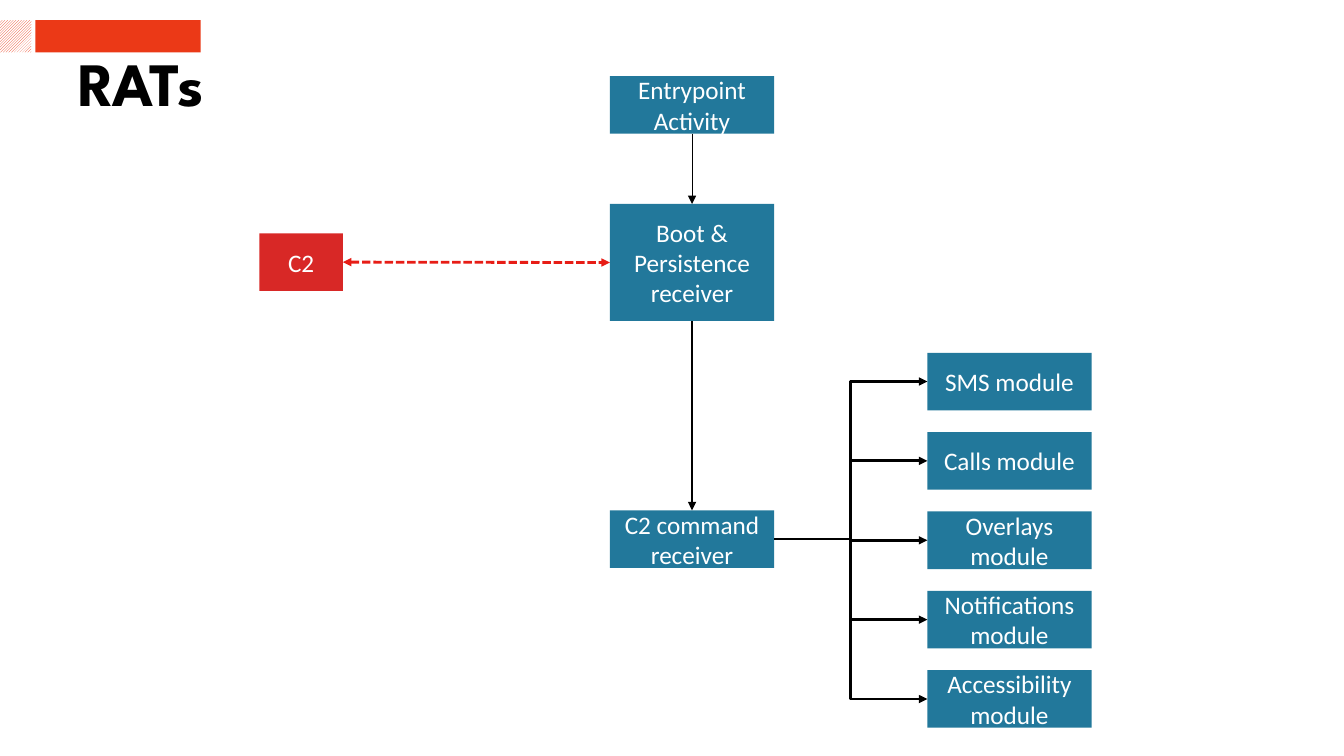
from lxml.etree import SubElement
from pptx import Presentation
from pptx.dml.color import RGBColor
from pptx.enum.dml import MSO_LINE, MSO_PATTERN
from pptx.enum.shapes import MSO_CONNECTOR, MSO_SHAPE
from pptx.enum.text import MSO_ANCHOR, MSO_AUTO_SIZE, PP_ALIGN
from pptx.oxml.ns import qn
from pptx.util import Cm, Pt

COLORS = {
    "accent": "EB3917",
    "server": "D82826",
    "traffic": "E71D16",
    "module": "22789B",
    "black": "000000",
    "white": "FFFFFF",
}
TITLE_FONT = {"name": "League Spartan", "size": Pt(44), "bold": True}
BOX_FONT = {"name": "Calibri", "size": Pt(18), "bold": False}
TITLE_FRAME = {
    "margin_left": Cm(0.03), "margin_right": Cm(0.03),
    "margin_top": Cm(0.03), "margin_bottom": Cm(0.03),
    "vertical_anchor": MSO_ANCHOR.TOP, "auto_size": MSO_AUTO_SIZE.NONE,
    "word_wrap": True,
}
BOX_FRAME = {"vertical_anchor": MSO_ANCHOR.MIDDLE, "word_wrap": True}
TOP, LEFT, BOTTOM, RIGHT = range(4)
BOX_W, BOX_H = 4.14, 1.45
FLOW_X, MODULE_X = 15.37, 23.37
MODULE_TOP, MODULE_STEP = 8.89, 2
MODULES = ["SMS module", "Calls module", "Overlays module",
           "Notifications module", "Accessibility module"]


def rgb(name):
    return RGBColor.from_string(COLORS[name])


def style(target, values):
    for key, value in values.items():
        setattr(target, key, value)


class Deck:
    def __init__(self):
        self.prs = Presentation()
        self.prs.slide_width, self.prs.slide_height = Cm(33.87), Cm(19.05)
        self.s = self.prs.slides.add_slide(self.prs.slide_layouts[5])

    def label(self, sp, text, frame, font, color, align):
        tf = sp.text_frame
        style(tf, frame)
        p = tf.paragraphs[0]
        p.alignment = align
        r = p.add_run()
        r.text = text
        style(r.font, font)
        r.font.color.rgb = rgb(color)
        return p

    def title(self, text, x, y, w, h):
        sp = self.s.shapes.title
        style(sp, {"left": Cm(x), "top": Cm(y), "width": Cm(w), "height": Cm(h)})
        p = self.label(sp, text, TITLE_FRAME, TITLE_FONT, "black", PP_ALIGN.LEFT)
        p.line_spacing = 0.8

    def bar(self, x, y, w, h, color, hatched=False):
        sp = self.s.shapes.add_shape(MSO_SHAPE.RECTANGLE, Cm(x), Cm(y), Cm(w), Cm(h))
        sp.shadow.inherit = False
        sp.line.fill.background()
        if hatched:
            sp.fill.patterned()
            sp.fill.pattern = MSO_PATTERN.LIGHT_UPWARD_DIAGONAL
            sp.fill.back_color.rgb = rgb("white")
        else:
            sp.fill.solid()
        sp.fill.fore_color.rgb = rgb(color)
        return sp

    def box(self, text, x, y, w=BOX_W, h=BOX_H, color="module"):
        sp = self.bar(x, y, w, h, color)
        self.label(sp, text, BOX_FRAME, BOX_FONT, "white", PP_ALIGN.CENTER)
        return sp

    def arrow(self, start, start_side, end, end_side, kind=MSO_CONNECTOR.STRAIGHT,
              color="black", width=2, dash=None, ends=("tailEnd",)):
        cx = self.s.shapes.add_connector(kind, 0, 0, 0, 0)
        cx.begin_connect(start, start_side)
        cx.end_connect(end, end_side)
        cx.line.color.rgb = rgb(color)
        cx.line.width = Pt(width)
        if dash:
            cx.line.dash_style = dash
        sp_pr = cx._element.spPr
        ln = sp_pr.find(qn("a:ln"))
        for tag in ends:
            SubElement(ln, qn(f"a:{tag}"), type="triangle")
        SubElement(sp_pr, qn("a:effectLst"))


def main():
    deck = Deck()
    deck.bar(0, 0.51, 0.79, 0.81, "accent", hatched=True)
    deck.bar(0.89, 0.51, 4.17, 0.81, "accent")
    deck.title("RATs", 1.96, 1.47, 25.93, 1.45)

    server = deck.box("C2", 6.54, 5.88, w=2.1, color="server")
    entry = deck.box("Entrypoint Activity", FLOW_X, 1.92)
    boot = deck.box("Boot & Persistence receiver", FLOW_X, 5.14, h=2.95)
    command = deck.box("C2 command receiver", FLOW_X, 12.86)
    modules = [deck.box(text, MODULE_X, MODULE_TOP + i * MODULE_STEP)
               for i, text in enumerate(MODULES)]

    deck.arrow(server, RIGHT, boot, LEFT, color="traffic",
               dash=MSO_LINE.SQUARE_DOT, ends=("headEnd", "tailEnd"))
    deck.arrow(entry, BOTTOM, boot, TOP, width=0.75)
    deck.arrow(boot, BOTTOM, command, TOP)
    for module in modules:
        deck.arrow(command, RIGHT, module, LEFT, MSO_CONNECTOR.ELBOW)

    deck.prs.save("out.pptx")


if __name__ == "__main__":
    main()
